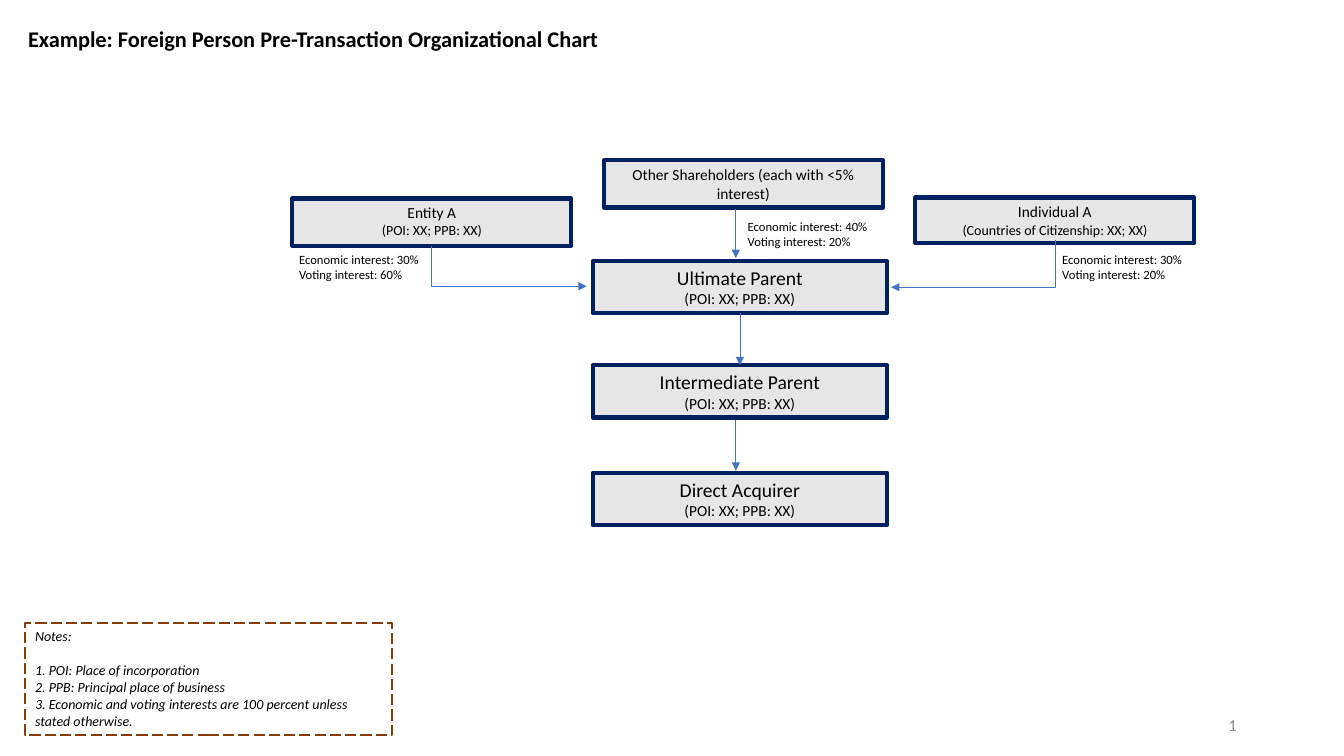
from dataclasses import dataclass

from lxml import etree
from pptx import Presentation
from pptx.dml.color import RGBColor
from pptx.enum.dml import MSO_LINE
from pptx.enum.shapes import MSO_CONNECTOR, MSO_SHAPE
from pptx.enum.text import MSO_ANCHOR, MSO_AUTO_SIZE, PP_ALIGN
from pptx.oxml.ns import qn
from pptx.util import Pt

LEFT, CENTER, RIGHT = PP_ALIGN.LEFT, PP_ALIGN.CENTER, PP_ALIGN.RIGHT
TOP, MIDDLE = MSO_ANCHOR.TOP, MSO_ANCHOR.MIDDLE
GROW = MSO_AUTO_SIZE.SHAPE_TO_FIT_TEXT
DASH = MSO_LINE.LONG_DASH
RECT = MSO_SHAPE.RECTANGLE
STRAIGHT, ELBOW = MSO_CONNECTOR.STRAIGHT, MSO_CONNECTOR.ELBOW
BOTTOM_SIDE, TOP_SIDE = 2, 0


@dataclass(frozen=True)
class Theme:
    font: str = "Calibri"
    ink: str = "000000"
    fill: str = "E7E6E6"
    edge: str = "002060"
    arrow: str = "4472C4"
    note: str = "843C0B"
    page: str = "8C8C8C"
    title: int = 16
    parent: int = 14
    number: int = 12
    body: int = 11
    small: int = 10
    label: int = 9


THEME = Theme()


def color(code):
    return RGBColor.from_string(code)


def write(shape, lines, align=LEFT, anchor=TOP, ink=THEME.ink, gap=0, **style):
    """Fill a shape with (text, size) lines; gap follows the first line."""
    frame = shape.text_frame
    setup = {"word_wrap": True, "auto_size": GROW, "vertical_anchor": anchor}
    for key, value in setup.items():
        setattr(frame, key, value)
    for index, (text, size) in enumerate(lines):
        para = frame.add_paragraph() if index else frame.paragraphs[0]
        para.alignment = align
        if index == 1 and gap:
            para.space_before = Pt(gap)
        run = para.add_run()
        run.text = text
        looks = {"name": THEME.font, "size": Pt(size), **style}
        for key, value in looks.items():
            setattr(run.font, key, value)
        run.font.color.rgb = color(ink)


def label(slide, place, lines, **style):
    shape = slide.shapes.add_textbox(*map(Pt, place))
    write(shape, lines, **style)


def box(slide, place, lines, edge=THEME.edge, width=3, fill=THEME.fill,
        dash=None, align=CENTER, **style):
    shape = slide.shapes.add_shape(RECT, *map(Pt, place))
    shape.shadow.inherit = False
    if fill:
        shape.fill.solid()
        shape.fill.fore_color.rgb = color(fill)
    else:
        shape.fill.background()
    shape.line.color.rgb = color(edge)
    shape.line.width = Pt(width)
    if dash:
        shape.line.dash_style = dash
    write(shape, lines, align=align, **style)
    return shape


def arrow(slide, kind, *ends):
    link = slide.shapes.add_connector(kind, *map(Pt, ends))
    link.line.color.rgb = color(THEME.arrow)
    link.line.width = Pt(0.5)
    line = link.line._get_or_add_ln()
    etree.SubElement(line, qn("a:tailEnd"), type="triangle")
    etree.SubElement(link._element.spPr, qn("a:effectLst"))
    return link


def bend(slide, x1, y1, x2, y2):
    """Draw an arrow that goes down first and then sideways."""
    mid_x, mid_y = (x1 + x2) / 2, (y1 + y2) / 2
    side = 1 if x2 > x1 else -1
    half_w, half_h = side * (y2 - y1) / 2, abs(x2 - x1) / 2
    link = arrow(slide, ELBOW, mid_x + half_w, mid_y - half_h,
                 mid_x - half_w, mid_y + half_h)
    props = link._element.spPr
    props.find(qn("a:prstGeom")).set("prst", "bentConnector2")
    turn = 270 if side > 0 else 90
    props.find(qn("a:xfrm")).set("rot", str(turn * 60000))


def main():
    deck = Presentation()
    deck.slide_width, deck.slide_height = Pt(960), Pt(540)
    slide = deck.slides.add_slide(deck.slide_layouts[6])

    label(slide, (13, 14.4, 449.3, 26.6),
          [("Example: Foreign Person Pre-Transaction Organizational Chart",
            THEME.title)], bold=True)

    origin = "(POI: XX; PPB: XX)"
    chain = [box(slide, (423.4, top, 210.2, 37.4),
                 [(name, THEME.parent), (origin, THEME.body)])
             for name, top in (("Ultimate Parent", 186.5),
                               ("Intermediate Parent", 260.9),
                               ("Direct Acquirer", 337.7))]

    owners = (
        (208.8, 141.8, 33.8, "Entity A", origin),
        (431.3, 114.5, 33.8, "Other Shareholders (each with <5% interest)", ""),
        (653.8, 141.1, 32.4, "Individual A",
         "(Countries of Citizenship: XX; XX)"),
    )
    for left, top, height, name, detail in owners:
        lines = [(name, THEME.body)]
        if detail:
            lines.append((detail, THEME.small))
        box(slide, (left, top, 199.4, height), lines)

    stakes = ((206.6, 176.4, 30, 60), (527, 152.6, 40, 20),
              (751.7, 176.4, 30, 20))
    for left, top, share, vote in stakes:
        label(slide, (left, top, 130, 28.8),
              [(f"Economic interest: {share}%", THEME.label),
               (f"Voting interest: {vote}%", THEME.label)])

    bend(slide, 308.2, 175.7, 419, 204.5)
    bend(slide, 753.5, 171.4, 636.5, 205.2)
    arrow(slide, STRAIGHT, 525.6, 149, 525.6, 184.3)
    arrow(slide, STRAIGHT, 525.6, 300.2, 525.6, 336.2)
    link = arrow(slide, STRAIGHT, 527, 223.9, 527, 259.9)
    link.begin_connect(chain[0], BOTTOM_SIDE)
    link.end_connect(chain[1], TOP_SIDE)

    notes = ("Notes:", "1. POI: Place of incorporation",
             "2. PPB: Principal place of business",
             "3. Economic and voting interests are 100 percent unless "
             "stated otherwise.")
    box(slide, (18, 445, 262.1, 79.9), [(text, THEME.small) for text in notes],
        edge=THEME.note, width=1, fill=None, dash=DASH, align=LEFT,
        gap=12, italic=True)

    label(slide, (674.6, 503.3, 216, 28.8), [("1", THEME.number)],
          align=RIGHT, anchor=MIDDLE, ink=THEME.page)
    deck.save("out.pptx")


if __name__ == "__main__":
    main()
